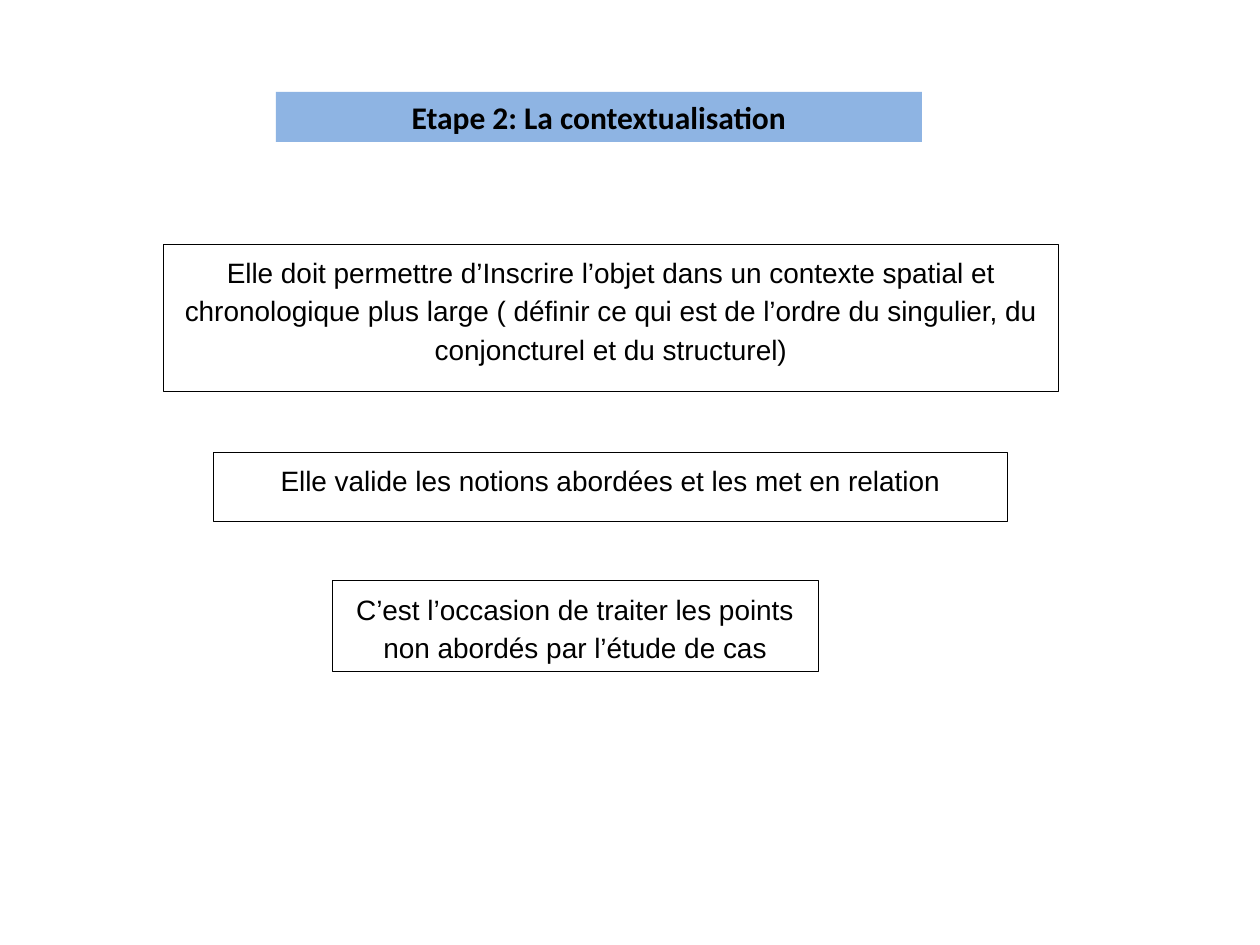
from dataclasses import dataclass

from pptx import Presentation
from pptx.dml.color import RGBColor
from pptx.enum.shapes import MSO_SHAPE
from pptx.enum.text import MSO_ANCHOR, PP_ALIGN
from pptx.util import Emu, Pt

RECTANGLE = MSO_SHAPE.RECTANGLE
TOP = MSO_ANCHOR.TOP
CENTER = PP_ALIGN.CENTER
EMU_PER_PX = 914400 // 126


@dataclass(frozen=True)
class Theme:
    ink: RGBColor = RGBColor(0x00, 0x00, 0x00)
    paper: RGBColor = RGBColor(0xFF, 0xFF, 0xFF)
    banner: RGBColor = RGBColor(0x8E, 0xB4, 0xE3)
    title_font: str = "Calibri"
    body_font: str = "Arial"
    title_size: int = 18
    body_size: int = 16
    border: float = 0.5


THEME = Theme()

TITLE = ("Etape 2: La contextualisation", (276, 92, 646, 50))

# Text and box (left, top, width, height) of each statement, in px
STATEMENTS = [
    ("Elle doit permettre d’Inscrire l’objet dans un contexte spatial et "
     "chronologique plus large ( définir ce qui est de l’ordre du singulier, "
     "du conjoncturel et du structurel)", (163, 244, 896, 147)),
    ("Elle valide les notions abordées et les met en relation",
     (213, 452, 795, 69)),
    ("C’est l’occasion de traiter les points non abordés par l’étude de cas",
     (332, 581, 486, 91)),
]


def px(length):
    return Emu(length * EMU_PER_PX)


def add_text_box(page, text, box, fill):
    """Add a filled rectangle with centred text; return it and its paragraph."""
    shape = page.shapes.add_shape(RECTANGLE, *map(px, box))
    shape.shadow.inherit = False
    shape.fill.solid()
    shape.fill.fore_color.rgb = fill
    frame = shape.text_frame
    frame.word_wrap = True
    frame.vertical_anchor = TOP
    para = frame.paragraphs[0]
    para.text = text
    para.alignment = CENTER
    para.font.color.rgb = THEME.ink
    return shape, para


def add_title(page, text, box):
    shape, para = add_text_box(page, text, box, THEME.banner)
    shape.line.fill.background()
    para.font.name = THEME.title_font
    para.font.size = Pt(THEME.title_size)
    para.font.bold = True


def add_statement(page, text, box):
    shape, para = add_text_box(page, text, box, THEME.paper)
    shape.line.color.rgb = THEME.ink
    shape.line.width = Pt(THEME.border)
    para.font.name = THEME.body_font
    para.font.size = Pt(THEME.body_size)
    para.line_spacing = 1.15
    para.space_after = Pt(10)


def main():
    deck = Presentation()
    deck.slide_width, deck.slide_height = px(1260), px(945)
    page = deck.slides.add_slide(deck.slide_layouts[6])

    # Title banner
    add_title(page, *TITLE)

    # Framed statements
    for text, box in STATEMENTS:
        add_statement(page, text, box)

    deck.save("out.pptx")


if __name__ == "__main__":
    main()
